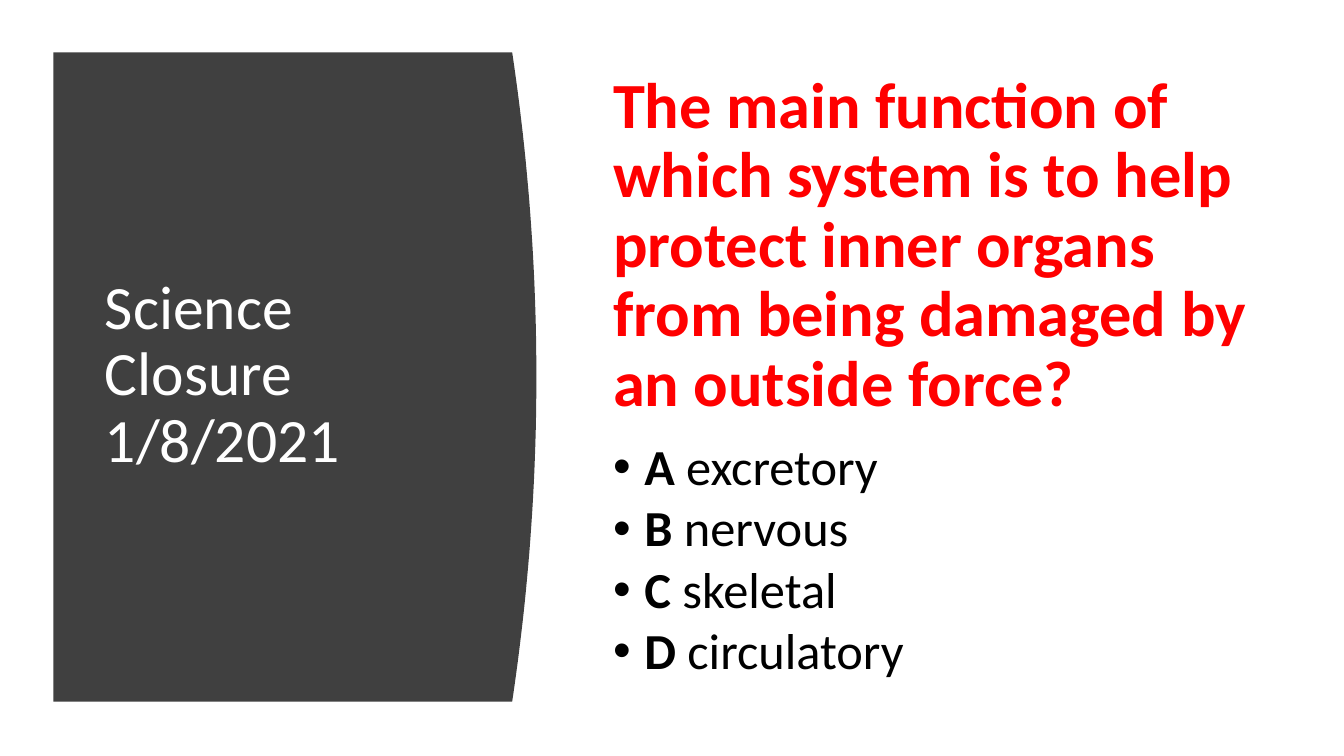
import pptx
import pptx.dml.color
import pptx.enum.text
import pptx.oxml
import pptx.util

Inches = pptx.util.Inches
Pt = pptx.util.Pt


def colour(value):
    return pptx.dml.color.RGBColor.from_string(value)


def apply(target, values):
    for name, value in values.items():
        setattr(target, name, value)


class ClosureSlide:
    font = "Calibri"
    panel_fill = "404040"
    title_format = {"size": Pt(44), "bold": False}
    question_format = {"size": Pt(46), "bold": True}
    answer_format = {"size": Pt(36)}

    def __init__(self, deck):
        self.page = deck.slides.add_slide(deck.slide_layouts[1])

    def panel(self, left, top, edge, bottom, bulge, steps=48):
        middle, half = (top + bottom) / 2, (bottom - top) / 2
        heights = [top + (bottom - top) * step / steps for step in range(steps + 1)]
        curve = [(edge + bulge * (1 - ((y - middle) / half) ** 2), y) for y in heights]
        builder = self.page.shapes.build_freeform(Inches(left), Inches(top))
        builder.add_line_segments(
            [(Inches(x), Inches(y)) for x, y in curve + [(left, bottom)]], close=True
        )
        shape = builder.convert_to_shape()
        shape.shadow.inherit = False
        shape.fill.solid()
        shape.fill.fore_color.rgb = colour(self.panel_fill)
        shape.line.fill.background()
        tree = self.page.shapes.element
        tree.remove(shape.element)
        tree.insert(2, shape.element)

    def place(self, box, left, top, width, height, margins):
        apply(box, {"left": Inches(left), "top": Inches(top),
                    "width": Inches(width), "height": Inches(height)})
        apply(box.text_frame, {
            "word_wrap": True,
            "auto_size": pptx.enum.text.MSO_AUTO_SIZE.NONE,
            "vertical_anchor": pptx.enum.text.MSO_ANCHOR.MIDDLE,
            **{f"margin_{side}": Inches(size) for side, size in margins.items()},
        })

    def style(self, para, hue, values, after=0):
        apply(para, {"alignment": pptx.enum.text.PP_ALIGN.LEFT, "line_spacing": 0.9,
                     "space_before": Pt(0), "space_after": Pt(after)})
        apply(para.font, {"name": self.font, **values})
        para.font.color.rgb = colour(hue)
        for span in para.runs:
            apply(span.font, {"name": self.font, **values})
            span.font.color.rgb = colour(hue)

    def bullet(self, para, indent, mark=None):
        properties = para._p.get_or_add_pPr()
        properties.set("marL", str(Inches(indent)))
        properties.set("indent", str(-Inches(indent)))
        tag = f'buChar char="{mark}"' if mark else "buNone"
        space = "http://schemas.openxmlformats.org/drawingml/2006/main"
        properties.append(pptx.oxml.parse_xml(f'<a:{tag} xmlns:a="{space}"/>'.replace("a:buNone", "a:buNone")))

    def title(self, text):
        box = self.page.shapes.title
        self.place(box, 0.94, 1.11, 3.74, 5.24, {"left": 0.1, "right": 0.1})
        box.text_frame.text = text
        self.style(box.text_frame.paragraphs[0], "FFFFFF", self.title_format)

    def quiz(self, question, answers):
        box = self.page.placeholders[1]
        sides = ("left", "top", "right", "bottom")
        self.place(box, 6.02, 0.52, 6.43, 6.43, dict.fromkeys(sides, 0.06))
        box.text_frame.text = question
        para = box.text_frame.paragraphs[0]
        self.style(para, "FF0000", self.question_format, after=15.5)
        self.bullet(para, 0)
        for letter, answer in answers.items():
            para = box.text_frame.add_paragraph()
            for text, bold in ((letter + " ", True), (answer, False)):
                span = para.add_run()
                span.text = text
                span.font.bold = bold
            self.style(para, "000000", self.answer_format, after=5)
            self.bullet(para, 0.31, "•")


def main():
    deck = pptx.Presentation()
    apply(deck, {"slide_width": Inches(13.33), "slide_height": Inches(7.5)})
    slide = ClosureSlide(deck)
    slide.panel(left=0.53, top=0.52, edge=5.08, bottom=6.96, bulge=0.24)
    slide.title("Science Closure\v1/8/2021")
    slide.quiz(
        "The main function of which system is to help protect inner organs "
        "from being damaged by an outside force?",
        {"A": "excretory", "B": "nervous", "C": "skeletal", "D": "circulatory"},
    )
    deck.save("out.pptx")


if __name__ == "__main__":
    main()
